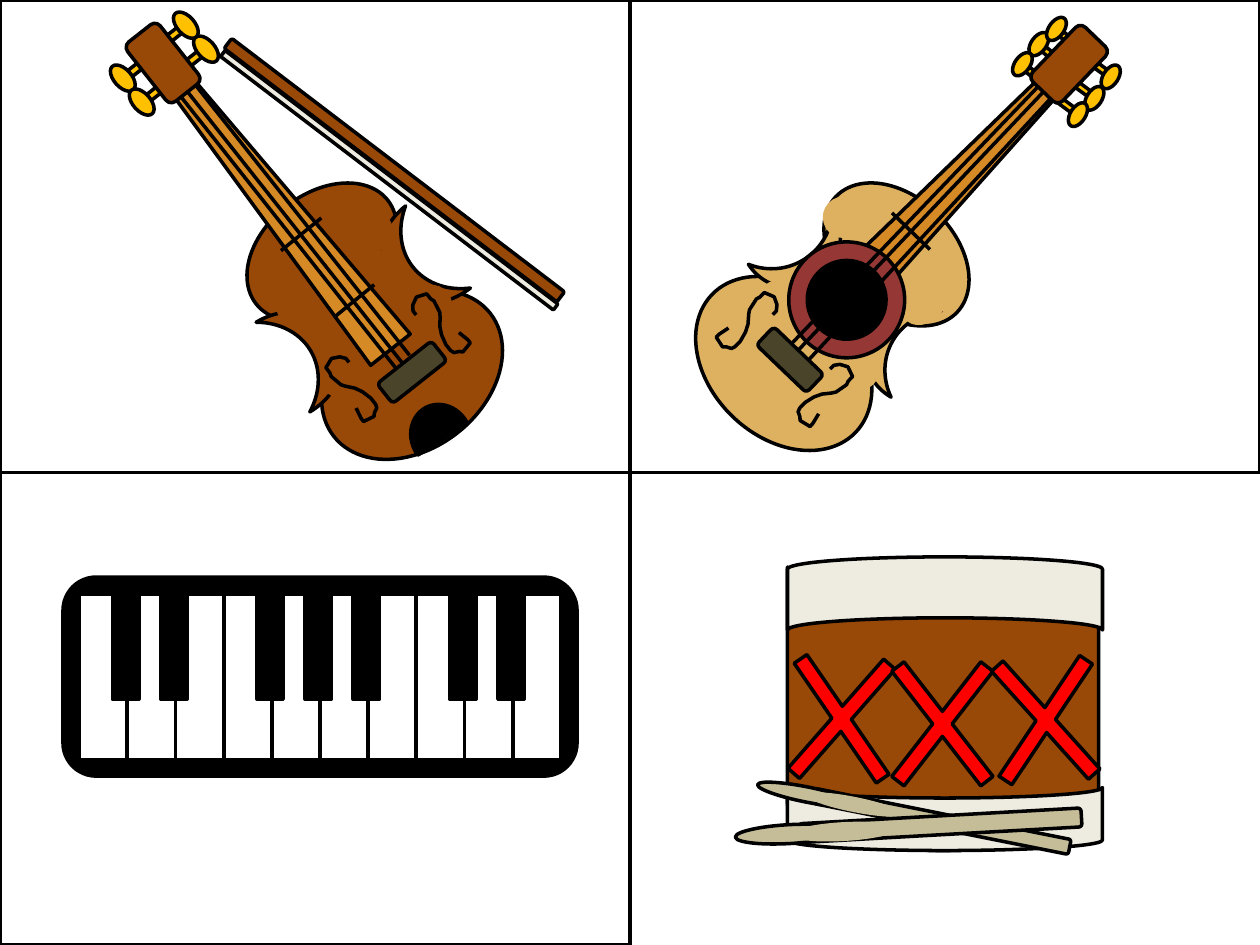
from lxml import etree
from pptx import Presentation
from pptx.dml.color import RGBColor
from pptx.enum.shapes import MSO_CONNECTOR, MSO_SHAPE
from pptx.oxml.ns import qn
from pptx.util import Cm, Pt

RECT = MSO_SHAPE.RECTANGLE
ROUND = MSO_SHAPE.ROUNDED_RECTANGLE
OVAL = MSO_SHAPE.OVAL
MOON = MSO_SHAPE.MOON
NECK = MSO_SHAPE.TRAPEZOID
RING = MSO_SHAPE.DONUT
CHORD = MSO_SHAPE.CHORD
CROSS = MSO_SHAPE.MATH_MULTIPLY
BAND = MSO_SHAPE.FLOWCHART_STORED_DATA
STRAIGHT = MSO_CONNECTOR.STRAIGHT

COLORS = {
    "black": "000000", "white": "FFFFFF", "brown": "984807", "red": "FF0000",
    "ivory": "EEECE1", "stick": "C4BD97", "gold": "FFC000", "neck": "D58A25",
    "bridge": "4A452A", "tan": "DEB160", "rose": "953735",
}
WIDE, HIGH = 5, 3.75  # one panel, in grid units of 2.54 cm
SCROLL = [
    (.11, -.18), (.11, -.22), (.08, -.26), (.02, -.29), (-.06, -.26),
    (-.06, -.21), (-.07, -.18), (-.05, -.08), (-.03, -.05), (.02, .01),
    (.05, .07), (.07, .15), (.07, .21), (.06, .24), (.02, .26), (0, .28),
    (-.09, .26), (-.09, .23), (-.07, .14),
]


def grid(n):
    return Cm(2.54 * n)


def color(name):
    return RGBColor.from_string(COLORS[name])


def ink(line):
    line.color.rgb = color("black")
    line.width = Pt(2)


class Art:
    """A group of shapes placed relative to the corner of a panel."""

    def __init__(self, slide, left, top):
        self.shapes = slide.shapes.add_group_shape().shapes
        self.left, self.top = left, top

    def spot(self, x, y):
        return grid(self.left + x), grid(self.top + y)

    def put(self, kind, x, y, w, h, fill, turn=0, edge=True, adj=()):
        shape = self.shapes.add_shape(kind, *self.spot(x, y), grid(w), grid(h))
        shape.shadow.inherit = False
        shape.rotation = turn
        for i, value in enumerate(adj):
            shape.adjustments[i] = value
        shape.fill.solid()
        shape.fill.fore_color.rgb = color(fill)
        if edge:
            ink(shape.line)
        else:
            shape.line.fill.background()

    def patch(self, x, y, w, h, fill, turn):
        """Oval without an edge, which hides the seams below it."""
        self.put(OVAL, x, y, w, h, fill, turn, edge=False)

    def string(self, x1, y1, x2, y2):
        line = self.shapes.add_connector(STRAIGHT, *self.spot(x1, y1), *self.spot(x2, y2))
        ink(line.line)
        etree.SubElement(line._element.spPr, qn("a:effectLst"))

    def scroll(self, x, y, turn, side):
        """Curled sound hole; side -1 mirrors it."""
        dots = [self.spot(x + side * dx, y + dy) for dx, dy in SCROLL]
        pen = self.shapes.build_freeform(*dots[0])
        pen.add_line_segments(dots[1:], close=False)
        shape = pen.convert_to_shape()
        shape.shadow.inherit = False
        shape.fill.background()
        ink(shape.line)
        shape.rotation = turn

    def pegs(self, spots, size, turn, knob, shift):
        """Pegs with a knob on each, which is shifted from its peg."""
        for x, y in spots:
            self.put(ROUND, x, y, *size, "gold", turn)
            self.put(OVAL, x + shift[0], y + shift[1], *knob, "gold", turn - 3.6)


def violin(slide, left, top):
    art = Art(slide, left, top)
    turn = 321.7
    peg, knob = (.06, .24), (.25, .14)
    art.pegs([(1.48, .37), (1.32, .18)], peg, 51.7, knob, (.03, -.05))
    art.put(OVAL, 1.89, 1.54, 1.33, .92, "brown", turn)
    art.put(OVAL, 2.48, 2.39, 1.58, 1.17, "brown", turn)
    art.put(MOON, 3.03, 1.7, .5, .83, "brown", turn, adj=[.49])
    art.put(MOON, 2.21, 2.37, .5, .83, "brown", 149.1, adj=[.49])
    art.patch(2.37, 1.88, .92, 1.08, "brown", turn)
    art.put(NECK, 2.05, .33, .4, 2.74, "neck", turn)
    for x, y in [(1.49, .73), (1.54, .66), (1.43, .76)]:
        art.string(x, y, x + 1.71, y + 2.16)
    art.put(ROUND, 3.17, 2.68, .2, .55, "bridge", 51.7)
    art.pegs([(1.07, .41), (1.22, .6)], peg, 231.7, knob, (-.22, .14))
    art.put(ROUND, 1.13, .2, .33, .6, "brown", turn)
    for x, y in [(2.55, 1.73), (2.97, 2.26)]:
        art.string(x, y, x - .32, y + .26)
    for x, y in [(2.79, 1.67), (3.26, 2.26), (2.19, 2.26), (2.54, 2.83)]:
        art.patch(x, y, .33, .33, "brown", turn)
    art.scroll(2.79, 3.08, turn, 1)
    art.scroll(3.5, 2.58, turn, -1)
    art.put(ROUND, 3.08, -.31, .1, 3.32, "brown", 307.3)
    art.put(ROUND, 3.06, -.23, .06, 3.32, "ivory", 307.3)
    art.put(CHORD, 3.24, 3.23, .52, .47, "black", 62.8, adj=[47.05, 162])


def guitar(slide, left, top):
    art = Art(slide, left, top)
    turn = 43.8
    peg, knob = (.05, .2), (.21, .12)
    art.put(OVAL, 1.45, 1.56, 1.33, .92, "tan", turn)
    art.put(NECK, 2.17, .31, .4, 2.74, "neck", turn)
    art.put(OVAL, .43, 2.3, 1.58, 1.17, "tan", turn)
    art.put(MOON, 1.88, 2.31, .42, .79, "tan", 30.3, adj=[.49])
    art.put(MOON, 1.18, 1.66, .4, .79, "tan", 237.7, adj=[.49])
    art.patch(1.39, 2.04, .67, .67, "black", turn)
    art.string(2.38, 1.98, 2.08, 1.69)
    art.patch(2.17, 2.18, .33, .42, "tan", turn)
    for x, y in [(1.65, 2.77), (1.53, 1.56), (1.02, 2.22)]:
        art.patch(x, y, .33, .33, "tan", turn)
    art.scroll(.93, 2.56, turn, 1)
    art.scroll(1.55, 3.13, turn, -1)
    art.put(RING, 1.26, 1.92, .92, .92, "rose", turn, adj=[.16])
    art.string(3.61, .3, 1.29, 2.72)
    art.string(3.28, .73, 1.25, 2.87)
    art.string(3.46, .65, 1.36, 2.92)
    art.pegs([(3.32, .34), (3.19, .5), (3.46, .22)], peg, 309.5, knob, (-.18, -.05))
    art.pegs([(3.56, .6), (3.69, .43), (3.43, .73)], peg, 126.4, knob, (.02, .12))
    art.put(ROUND, 3.32, .21, .33, .6, "brown", turn)
    art.put(ROUND, 1.17, 2.58, .2, .55, "bridge", 133.8)


def piano(slide, left, top):
    art = Art(slide, left, top)
    step = 3.44 / 9
    art.put(ROUND, .5, .83, 4.08, 1.58, "black")
    for i in range(10):
        art.put(RECT, .63 + step * i, .97, .38, 1.31, "white")
    for i in (1, 2, 4, 5, 6, 8, 9):
        art.put(RECT, .51 + step * i, .97, .21, .83, "black")


def drum(slide, left, top):
    art = Art(slide, left, top)
    art.put(BAND, 1.36, .64, 2.25, 2.47, "brown", 270)
    for x, y, turn in [(1, 1.08, 3.4), (1.8, 1.12, 0), (2.62, 1.09, 355.9)]:
        art.put(CROSS, x, y, 1.36, 1.75, "red", turn, adj=[.09])
    art.put(BAND, 2.25, 1.5, .5, 2.5, "ivory", 270)
    art.put(BAND, 2.21, -.29, .58, 2.5, "ivory", 90)
    sticks = [
        (281.3, .12, (2.42, 1.74, 2.06), (1.34, 2.16), (1.72, 2.24), .79),
        (266.8, .15, (2.39, 1.68, 2.24), (1.19, 2.44), (1.62, 2.42), .86),
    ]
    for turn, thick, (x, y, long), tip, joint, size in sticks:
        art.put(ROUND, x, y, thick, long, "stick", turn)
        art.put(OVAL, *tip, thick, size, "stick", turn)
        art.patch(*joint, thick, size, "stick", turn)


def frame(slide, left, top):
    shape = slide.shapes.add_shape(RECT, grid(left), grid(top), grid(WIDE), grid(HIGH))
    shape.shadow.inherit = False
    shape.fill.background()
    ink(shape.line)


def main():
    deck = Presentation()
    deck.slide_width, deck.slide_height = grid(2 * WIDE), grid(2 * HIGH)
    slide = deck.slides.add_slide(deck.slide_layouts[6])
    drum(slide, WIDE, HIGH)
    violin(slide, 0, 0)
    guitar(slide, WIDE, 0)
    piano(slide, 0, HIGH)
    for left, top in [(0, 0), (WIDE, 0), (0, HIGH)]:
        frame(slide, left, top)
    deck.save("out.pptx")


if __name__ == "__main__":
    main()
